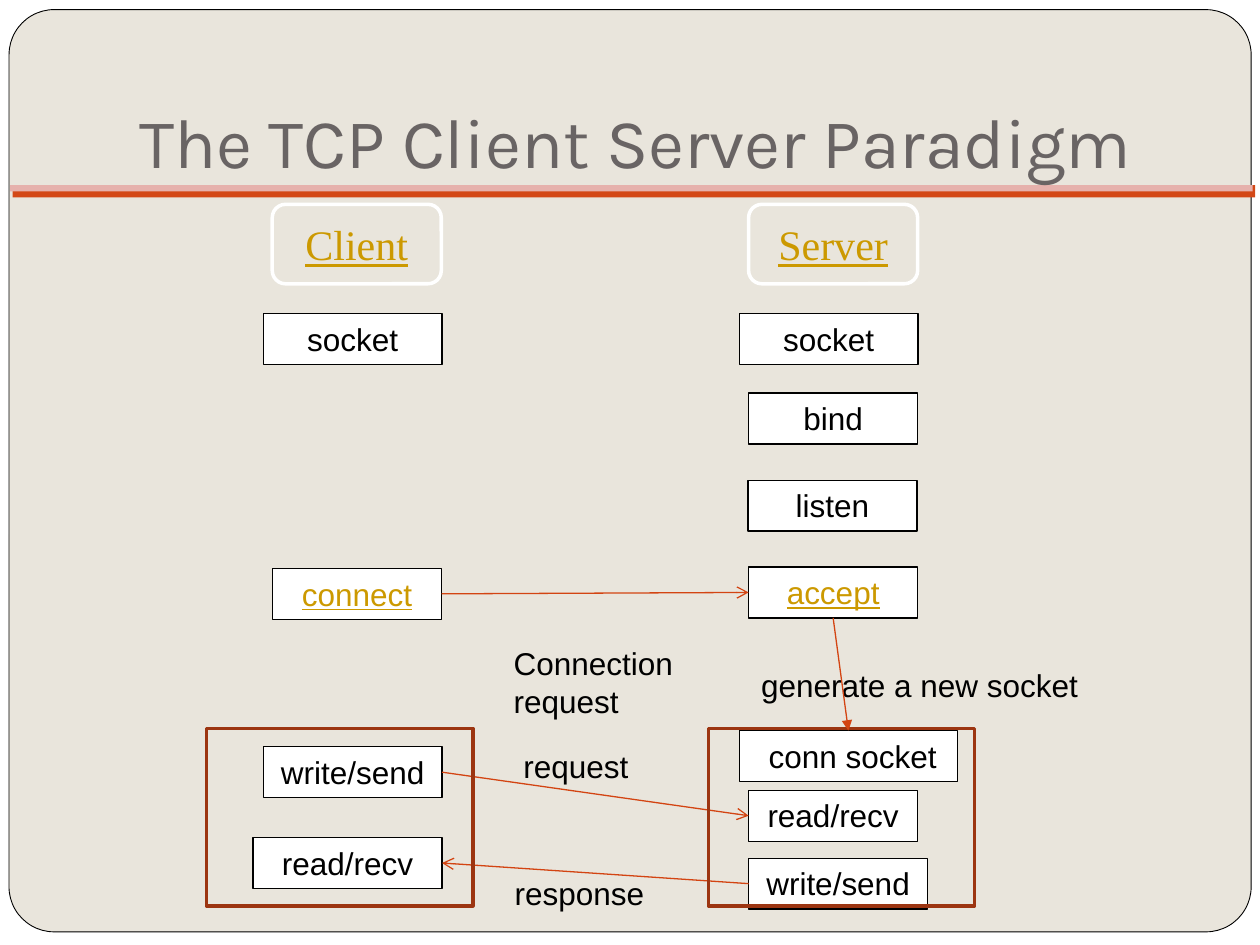
from lxml import etree
from pptx import Presentation
from pptx.dml.color import RGBColor
from pptx.enum.shapes import MSO_CONNECTOR, MSO_SHAPE
from pptx.enum.text import MSO_ANCHOR, PP_ALIGN
from pptx.oxml.ns import qn
from pptx.util import Pt

RECT, ROUND = MSO_SHAPE.RECTANGLE, MSO_SHAPE.ROUNDED_RECTANGLE
STRAIGHT = MSO_CONNECTOR.STRAIGHT
LEFT, MID = PP_ALIGN.LEFT, PP_ALIGN.CENTER
TOP, CENTER, BOTTOM = MSO_ANCHOR.TOP, MSO_ANCHOR.MIDDLE, MSO_ANCHOR.BOTTOM

COLORS = {
    "white": "FFFFFF", "black": "000000", "sand": "E9E5DC",
    "orange": "D34817", "pink": "E6B1AC", "gray": "696464",
    "gold": "CC9900", "arrow": "D34412", "rust": "9C3511",
}
BODY = {"size": Pt(18), "name": "Arial", "color": "black"}
LINK = {**BODY, "color": "gold", "underline": True}
HEAD = {**LINK, "size": Pt(24), "name": "Times New Roman"}
TITLE = {"size": Pt(40), "name": "Karla", "color": "gray"}

ROW = 29.1  # height of one line of text in its box
SITES = {"top": 0, "left": 1, "bottom": 2, "right": 3}

# key: text, left, top, width, format
CALLS = {
    "c_sock": ("socket", 150.4, 179.2, 102.2, BODY),
    "c_conn": ("connect", 155.6, 324.8, 96.8, BODY | LINK),
    "c_send": ("write/send", 150.4, 426.7, 102.2, BODY),
    "c_recv": ("read/recv", 144.6, 478.6, 108, BODY),
    "s_sock": ("socket", 422.4, 179.2, 102.2, BODY),
    "s_bind": ("bind", 427.8, 224.6, 96.6, BODY),
    "s_listen": ("listen", 427.4, 274.4, 96.6, BODY),
    "s_accept": ("accept", 427.8, 324, 96.6, LINK),
    "s_new": (" conn socket", 422.4, 417.5, 124.8, BODY),
    "s_recv": ("read/recv", 427.8, 451.6, 96.6, BODY),
    "s_send": ("write/send", 427.8, 490.4, 102.2, BODY),
}
FLOWS = [
    ("c_send", "right", "s_recv", "left"),
    ("s_send", "left", "c_recv", "right"),
    ("c_conn", "right", "s_accept", "left"),
]
LABELS = [
    ("Connection request", 286.4, 364.4, 113.8, 50.9),
    ("request", 292, 423.4, 85, ROW),
    ("generate a new socket", 427.8, 377.2, 200.9, ROW),
    ("response", 287, 496, 101.5, ROW),
]


def rgb(name):
    return RGBColor.from_string(COLORS[name])


def write(shape, text, form, align=MID, anchor=TOP, foot=3.6):
    frame = shape.text_frame
    frame.word_wrap = True
    frame.vertical_anchor = anchor
    frame.margin_bottom = Pt(foot)
    para = frame.paragraphs[0]
    para.alignment = align
    run = para.add_run()
    run.text = text
    for key, val in form.items():
        if key == "color":
            run.font.color.rgb = rgb(val)
        else:
            setattr(run.font, key, val)


def block(slide, kind, area, fill=None, line=None, width=0.75):
    shape = slide.shapes.add_shape(kind, *map(Pt, area))
    shape.shadow.inherit = False
    if fill:
        shape.fill.solid()
        shape.fill.fore_color.rgb = rgb(fill)
    else:
        shape.fill.background()
    if line:
        shape.line.color.rgb = rgb(line)
        shape.line.width = Pt(width)
    else:
        shape.line.fill.background()
    return shape


def label(slide, text, area, form=BODY, **style):
    write(slide.shapes.add_textbox(*map(Pt, area)), text, form, **style)


def arrow(slide, start, out, end, into, tip="arrow"):
    """Join two boxes at the named sides."""
    link = slide.shapes.add_connector(STRAIGHT, 0, 0, 0, 0)
    link.begin_connect(start, SITES[out])
    link.end_connect(end, SITES[into])
    link.line.color.rgb = rgb("arrow")
    link.line.width = Pt(0.75)
    etree.SubElement(link.line._get_or_add_ln(), qn("a:tailEnd"), type=tip)
    etree.SubElement(link._element.spPr, qn("a:effectLst"))


def backdrop(slide):
    slide.background.fill.solid()
    slide.background.fill.fore_color.rgb = rgb("white")
    card = block(slide, ROUND, (5.2, 5.5, 709.8, 527), "sand", "black", 0.5)
    card.adjustments[0] = 0.049
    block(slide, RECT, (7.2, 105.8, 710, 7), "orange")
    block(slide, RECT, (5.8, 105.8, 710, 3.6), "pink")


def main():
    deck = Presentation()
    deck.slide_width, deck.slide_height = Pt(720), Pt(540)
    slide = deck.slides.add_slide(deck.slide_layouts[6])

    backdrop(slide)
    label(slide, "The TCP Client Server Paradigm", (54, 21.6, 617.8, 90),
          TITLE, align=MID, anchor=BOTTOM, foot=7.2)
    for text, left in (("Client", 155.6), ("Server", 427.8)):
        head = block(slide, ROUND, (left, 116.8, 96.6, 45.4), None, "white", 2)
        write(head, text, HEAD, anchor=CENTER)

    boxes = {}
    for key, (text, left, top, width, form) in CALLS.items():
        boxes[key] = block(slide, RECT, (left, top, width, ROW), "white", "black")
        write(boxes[key], text, form)
    for start, out, end, into in FLOWS:
        arrow(slide, boxes[start], out, boxes[end], into)

    for text, *area in LABELS:
        label(slide, text, area, align=LEFT)
    for left in (118, 404.8):
        block(slide, RECT, (left, 416.2, 152.2, 101.4), None, "rust", 2)
    arrow(slide, boxes["s_accept"], "bottom", boxes["s_new"], "top", "triangle")

    deck.save("out.pptx")


if __name__ == "__main__":
    main()
